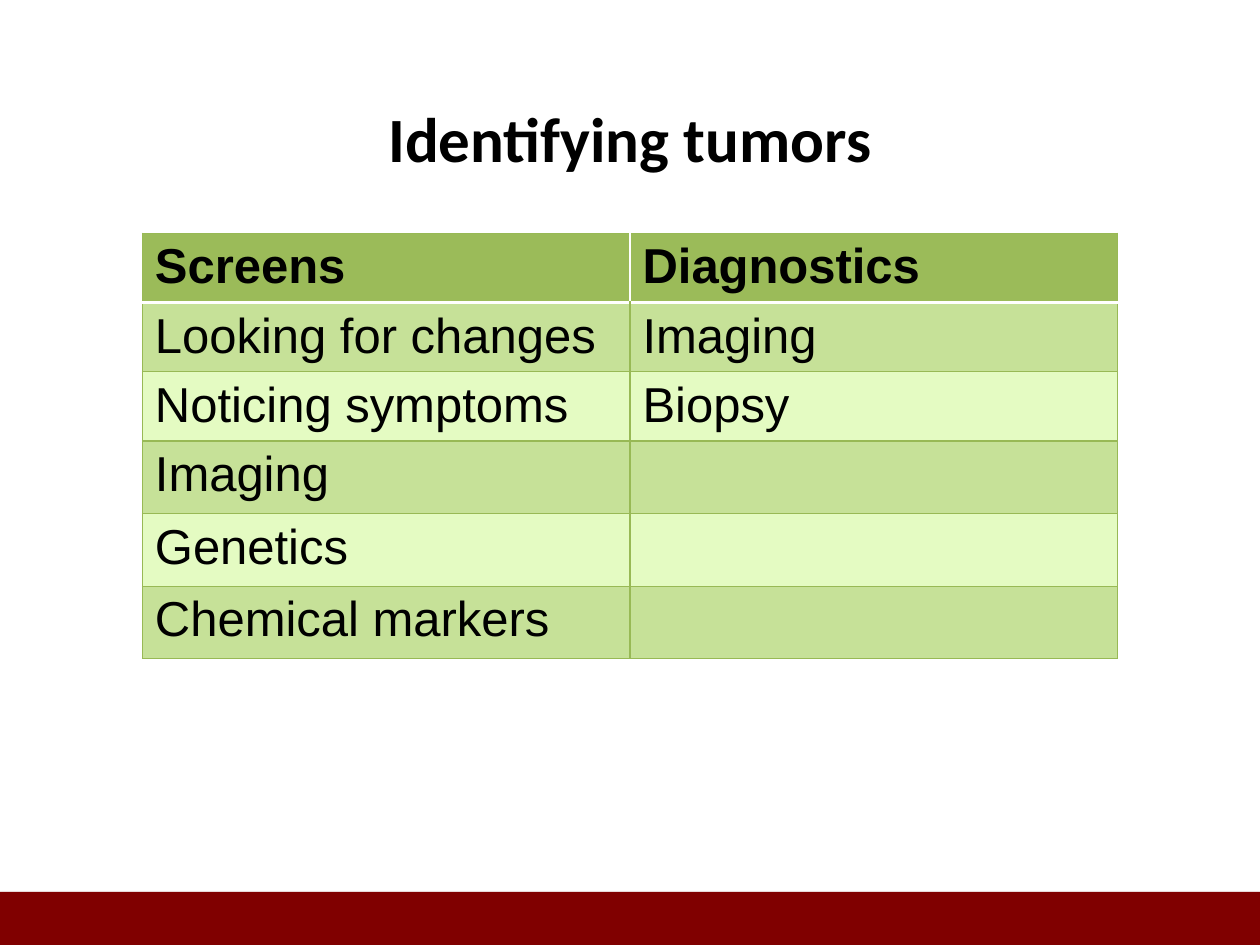
import dataclasses
import pptx
import pptx.dml.color
import pptx.enum.shapes
import pptx.enum.text
import pptx.oxml
import pptx.util

Cm = pptx.util.Cm
Pt = pptx.util.Pt
RGB = pptx.dml.color.RGBColor.from_string
NS = 'xmlns:a="http://schemas.openxmlformats.org/drawingml/2006/main"'


@dataclasses.dataclass(frozen=True)
class Theme:
    ink: str = "000000"
    bar: str = "800000"
    head: str = "9BBB59"
    bands: tuple = ("C6E198", "E4FBC2")
    line: str = "98B955"
    rule: str = "FFFFFF"
    title: int = 36
    body: int = 28


THEME = Theme()
ROWS = [
    ("Screens", "Diagnostics"),
    ("Looking for changes", "Imaging"),
    ("Noticing symptoms", "Biopsy"),
    ("Imaging", ""),
    ("Genetics", ""),
    ("Chemical markers", ""),
]


def apply(item, values):
    for name, value in values.items():
        setattr(item, name, value)


def write(frame, text, face, size, bold):
    run = frame.paragraphs[0].add_run()
    run.text = text
    apply(run.font, {"name": face, "size": Pt(size), "bold": bold})
    run.font.color.rgb = RGB(THEME.ink)


def add_bar(slide, left, top, width, height):
    bar = slide.shapes.add_shape(
        pptx.enum.shapes.MSO_SHAPE.RECTANGLE, left, top, width, height)
    bar.fill.solid()
    bar.fill.fore_color.rgb = RGB(THEME.bar)
    bar.line.fill.background()
    bar.shadow.inherit = False
    bar.element.spPr[-1].append(pptx.oxml.parse_xml(
        f'<a:outerShdw {NS} blurRad="{Pt(3.1)}" dist="{Pt(1.8)}" dir="5400000" '
        'rotWithShape="0"><a:srgbClr val="000000"><a:alpha val="35000"/>'
        '</a:srgbClr></a:outerShdw>'))


def add_title(slide, left, top, width, height):
    frame = slide.shapes.add_textbox(left, top, width, height).text_frame
    apply(frame, {"word_wrap": True,
                  "vertical_anchor": pptx.enum.text.MSO_ANCHOR.MIDDLE})
    frame.paragraphs[0].alignment = pptx.enum.text.PP_ALIGN.CENTER
    write(frame, "Identifying tumors", "Calibri", THEME.title, True)


def add_edge(cell, side, color, width):
    cell._tc.get_or_add_tcPr().append(pptx.oxml.parse_xml(
        f'<a:ln{side} {NS} w="{Pt(width)}"><a:solidFill>'
        f'<a:srgbClr val="{color}"/></a:solidFill></a:ln{side}>'))


def style_cell(cell, row, col):
    thin = (THEME.line, 0.75)
    thick = (THEME.rule, 2)
    edges = {"L": thin, "R": thin, "T": thin, "B": thin}
    if row == 0:
        edges["B"] = thick
        del edges["L" if col else "R"]
    elif row == 1:
        edges["T"] = thick
    for side, edge in edges.items():
        add_edge(cell, side, *edge)
    cell.fill.solid()
    cell.fill.fore_color.rgb = RGB(
        THEME.bands[(row - 1) % 2] if row else THEME.head)
    apply(cell, {"margin_top": Cm(0.13), "margin_bottom": Cm(0.08)})


def add_grid(slide, left, top, width, height):
    shape = slide.shapes.add_table(len(ROWS), 2, left, top, width, height)
    table = shape.table
    low = Cm(1.36)
    tall = (height - 3 * low) // 3
    for row, texts in enumerate(ROWS):
        table.rows[row].height = low if row < 3 else tall
        for col, text in enumerate(texts):
            cell = table.cell(row, col)
            style_cell(cell, row, col)
            if text:
                write(cell.text_frame, text, "Arial", THEME.body, row == 0)


def main():
    deck = pptx.Presentation()
    apply(deck, {"slide_width": Cm(25.4), "slide_height": Cm(19.05)})
    slide = deck.slides.add_slide(deck.slide_layouts[6])
    add_bar(slide, 0, Cm(17.98), Cm(25.4), Cm(1.07))
    add_title(slide, Cm(1.27), Cm(1.17), Cm(22.86), Cm(3.18))
    add_grid(slide, Cm(2.87), Cm(4.7), Cm(19.66), Cm(8.47))
    deck.save("out.pptx")


if __name__ == "__main__":
    main()
